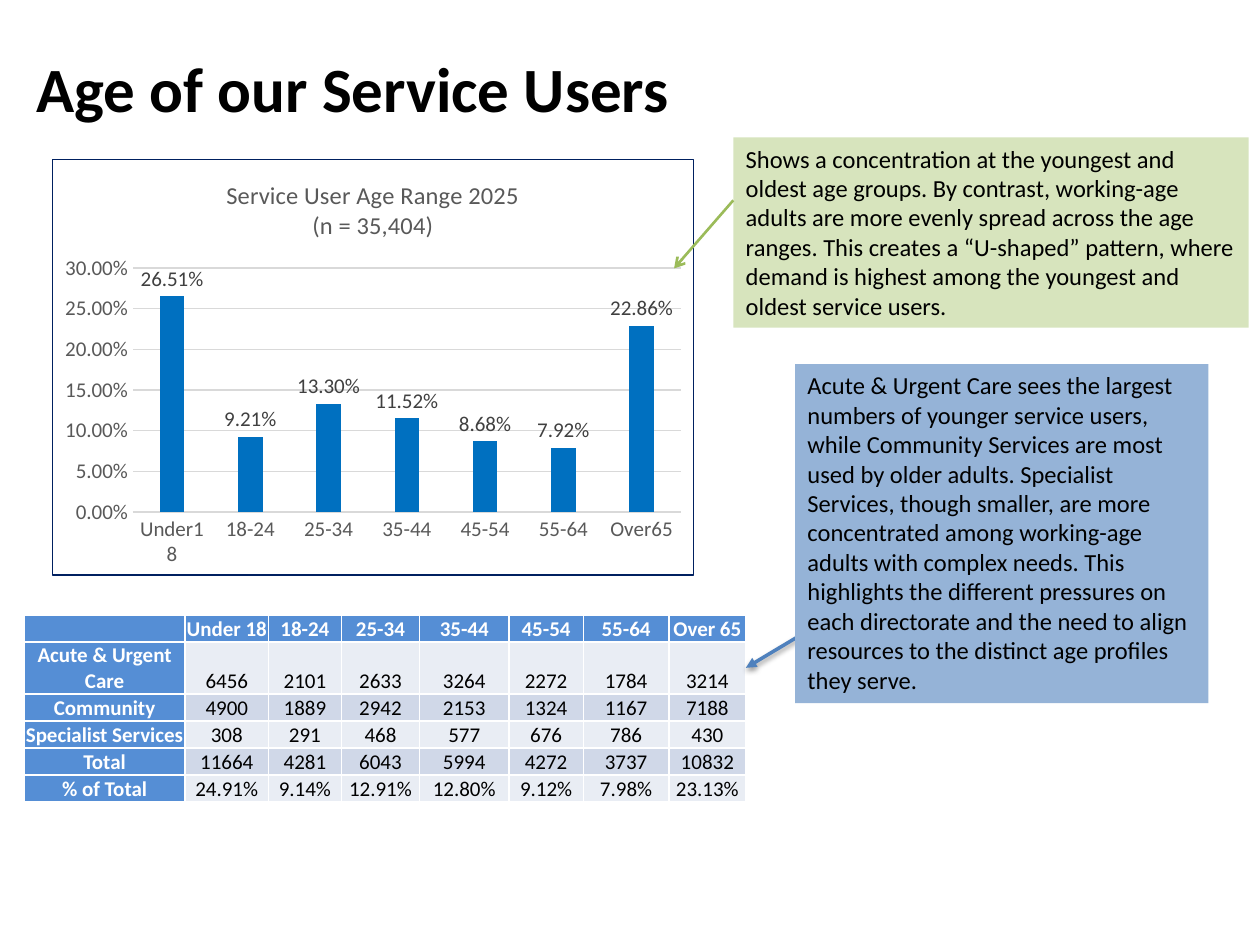
from lxml import etree
from pptx import Presentation
from pptx import util as u
from pptx.chart.data import CategoryChartData
from pptx.dml.color import RGBColor
from pptx.enum import chart as ch, shapes, text
from pptx.oxml import parse_xml
from pptx.oxml.ns import nsdecls, qn

BLACK, WHITE, GREY, PALE = "000000", "FFFFFF", "595959", "D9D9D9"
BLUE, NAVY, BAR = "558ED5", "002060", "0070C0"
BANDS = ("E9EDF4", "D0D8E8")


def tint(code):
    return RGBColor.from_string(code)


class Deck:
    """Holds the style and the current slide; lengths are cells of a 100 x 75 grid."""
    face, small, body, head = "Calibri", 12, 14, 36

    def __init__(self):
        self.prs = Presentation()
        self.prs.slide_width, self.prs.slide_height = u.Inches(10), u.Inches(7.5)
        self.cell = self.prs.slide_width / 100
        self.page = self.prs.slides.add_slide(self.prs.slide_layouts[5])

    def grid(self, *cells):
        return [round(n * self.cell) for n in cells]

    def style(self, font, size, color, bold=False):
        font.name, font.size, font.bold = self.face, u.Pt(size), bold
        font.color.rgb = tint(color)

    def put(self, para, words, size, color=BLACK, bold=False):
        run = para.add_run()
        run.text = words
        self.style(run.font, size, color, bold)

    def title(self, words, *box):
        shape = self.page.shapes.title
        shape.left, shape.top, shape.width, shape.height = self.grid(*box)
        frame = shape.text_frame
        frame.word_wrap = True
        frame.vertical_anchor = text.MSO_ANCHOR.MIDDLE
        frame.paragraphs[0].alignment = text.PP_ALIGN.LEFT
        self.put(frame.paragraphs[0], words, self.head, bold=True)

    def note(self, words, fill, *box):
        shape = self.page.shapes.add_shape(shapes.MSO_SHAPE.RECTANGLE, *self.grid(*box))
        shape.shadow.inherit = False
        shape.fill.solid()
        shape.fill.fore_color.rgb = tint(fill)
        shape.line.fill.background()
        frame = shape.text_frame
        frame.word_wrap = True
        frame.auto_size = text.MSO_AUTO_SIZE.SHAPE_TO_FIT_TEXT
        frame.vertical_anchor = text.MSO_ANCHOR.TOP
        frame.paragraphs[0].alignment = text.PP_ALIGN.LEFT
        self.put(frame.paragraphs[0], words, self.body)

    def arrow(self, color, width, tip, shade, *ends):
        line = self.page.shapes.add_connector(
            shapes.MSO_CONNECTOR.STRAIGHT, *self.grid(*ends))
        line.line.color.rgb, line.line.width = tint(color), u.Pt(width)
        props = line._element.spPr
        etree.SubElement(props.find(qn("a:ln")), qn("a:tailEnd"), type=tip)
        glow = etree.SubElement(props, qn("a:effectLst"))
        if shade:
            cast = etree.SubElement(glow, qn("a:outerShdw"), blurRad="40000",
                                    dist="20000", dir="5400000", rotWithShape="0")
            ink = etree.SubElement(cast, qn("a:srgbClr"), val=BLACK)
            etree.SubElement(ink, qn("a:alpha"), val="38000")

    def chart(self, lines, names, rates, *box):
        data = CategoryChartData(number_format="0.00%")
        data.categories = names
        data.add_series("Series 1", rates)
        chart = self.page.shapes.add_chart(
            ch.XL_CHART_TYPE.COLUMN_CLUSTERED, *self.grid(*box), data).chart
        self.style(chart.font, self.small, BLACK)
        chart.has_legend = False

        # Heading
        frame = chart.chart_title.text_frame
        for i, words in enumerate(lines):
            para = frame.add_paragraph() if i else frame.paragraphs[0]
            self.put(para, words, self.body, GREY)
        chart.chart_title.include_in_layout = False

        # Bars and labels
        plot = chart.plots[0]
        plot.gap_width, plot.overlap, plot.vary_by_categories = 219, -27, False
        bars = plot.series[0].format.fill
        bars.solid()
        bars.fore_color.rgb = tint(BAR)
        plot.has_data_labels = True
        tags = plot.data_labels
        tags.show_value = True
        tags.number_format, tags.number_format_is_linked = "0.00%", False
        tags.position = ch.XL_LABEL_POSITION.OUTSIDE_END
        self.style(tags.font, self.small, "404040")

        # Axes
        cat, val = chart.category_axis, chart.value_axis
        for axis in (cat, val):
            axis.major_tick_mark = axis.minor_tick_mark = ch.XL_TICK_MARK.NONE
            self.style(axis.tick_labels.font, self.small, GREY)
        val.minimum_scale, val.maximum_scale, val.major_unit = 0, 0.3, 0.05
        val.tick_labels.number_format = "0.00%"
        val.tick_labels.number_format_is_linked = False
        val.format.line.fill.background()
        for line in (cat.format.line, val.major_gridlines.format.line):
            line.color.rgb, line.width = tint(PALE), u.Pt(0.75)

        # Border
        chart._chartSpace.find(qn("c:txPr")).addprevious(parse_xml(
            f'<c:spPr {nsdecls("c", "a")}><a:noFill/><a:ln w="9525"><a:solidFill>'
            f'<a:srgbClr val="{NAVY}"/></a:solidFill></a:ln></c:spPr>'))

    def table(self, rows, wide, tall, left, top):
        table = self.page.shapes.add_table(
            len(rows), len(wide), *self.grid(left, top, sum(wide), sum(tall))).table
        for col, width in zip(table.columns, self.grid(*wide)):
            col.width = width
        for row, height in zip(table.rows, self.grid(*tall)):
            row.height = height
        for r, row in enumerate(rows):
            for c, words in enumerate(row):
                head = r == 0 or c == 0
                fill = BLUE if head else BANDS[(r - 1) % 2]
                self.fill(table.cell(r, c), words, fill, head)

    def fill(self, cell, words, fill, head):
        cell.margin_left = cell.margin_right = cell.margin_top = u.Inches(0.01)
        cell.margin_bottom = 0
        cell.vertical_anchor = text.MSO_ANCHOR.BOTTOM
        para = cell.text_frame.paragraphs[0]
        para.alignment = text.PP_ALIGN.CENTER
        if words:
            self.put(para, words, self.small, WHITE if head else BLACK, head)
        else:
            etree.SubElement(para._p, qn("a:endParaRPr"), sz=str(self.small * 100))
        props = cell._tc.get_or_add_tcPr()
        for side in ("lnL", "lnR", "lnT", "lnB"):
            edge = etree.SubElement(props, qn(f"a:{side}"), w="12700")
            paint = etree.SubElement(edge, qn("a:solidFill"))
            etree.SubElement(paint, qn("a:srgbClr"), val=WHITE)
        cell.fill.solid()
        cell.fill.fore_color.rgb = tint(fill)


def main():
    deck = Deck()

    # Title
    deck.title("Age of our Service Users", 1.9, 0.7, 55.2, 12.5)

    # Age chart
    ages = ["18-24", "25-34", "35-44", "45-54", "55-64"]
    deck.chart(["Service User Age Range 2025", "(n = 35,404)"],
               ["Under18", *ages, "Over65"],
               [0.2651, 0.0921, 0.133, 0.1152, 0.0868, 0.0792, 0.2286],
               4.1, 12.6, 51, 33.1)

    # Directorate table
    deck.table([
        ["", "Under 18", *ages, "Over 65"],
        ["Acute & Urgent Care", "6456", "2101", "2633", "3264", "2272", "1784", "3214"],
        ["Community", "4900", "1889", "2942", "2153", "1324", "1167", "7188"],
        ["Specialist Services", "308", "291", "468", "577", "676", "786", "430"],
        ["Total", "11664", "4281", "6043", "5994", "4272", "3737", "10832"],
        ["% of Total", "24.91%", "9.14%", "12.91%", "12.80%", "9.12%", "7.98%", "23.13%"],
    ], [12.8, 6.6, 5.8, 6.2, 7.1, 5.9, 6.8, 6.1], [2.1, 4.1] + [2.1] * 4, 1.9, 48.8)

    # Comments and their arrows
    deck.arrow("4F81BD", 2, "triangle", True, 69.9, 46.6, 59.2, 53)
    deck.note("Shows a concentration at the youngest and oldest age groups. By contrast, "
              "working-age adults are more evenly spread across the age ranges. This "
              "creates a “U-shaped” pattern, where demand is highest among the youngest "
              "and oldest service users.", "D7E4BD", 58.2, 10.9, 40.9, 15.1)
    deck.arrow("9BBB59", 1.5, "arrow", False, 58.2, 15.9, 53.5, 21.3)
    deck.note("Acute & Urgent Care sees the largest numbers of younger service users, "
              "while Community Services are most used by older adults. Specialist "
              "Services, though smaller, are more concentrated among working-age adults "
              "with complex needs. This highlights the different pressures on each "
              "directorate and the need to align resources to the distinct age profiles "
              "they serve.", "95B3D7", 63.1, 28.9, 32.8, 26.9)

    deck.prs.save("out.pptx")


if __name__ == "__main__":
    main()
